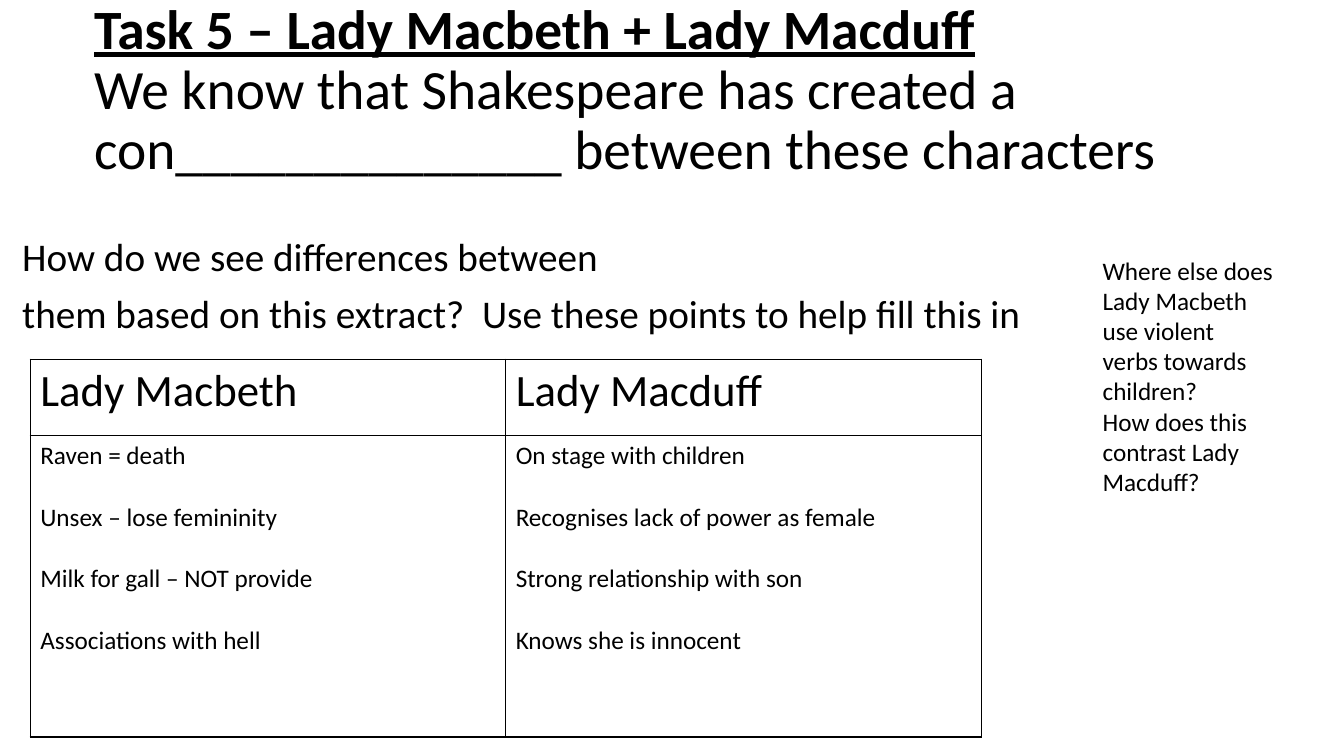
from dataclasses import dataclass
from lxml.etree import SubElement as Sub
from pptx import Presentation as Deck
from pptx.dml.color import RGBColor as Color
from pptx.enum.text import MSO_ANCHOR as Anchor, MSO_AUTO_SIZE as Fit, PP_ALIGN as Align
from pptx.oxml.ns import qn
from pptx.util import Inches, Pt

WIDE, HIGH = Inches(13.33), Inches(7.5)
BLACK = "000000"


@dataclass
class Box:
    left: float
    top: float
    width: float
    height: float

    def spans(self) -> tuple:
        return across(self.left), down(self.top), across(self.width), down(self.height)


@dataclass
class Column:
    head: str
    points: list


TITLE = Box(6.25, 2.4, 86.25, 19.33)
BODY = Box(0.9, 30.8, 91.6, 63.47)
TABLE = Box(2.25, 47.5, 70.75, 50)
NOTE = Box(81.3, 33.05, 14.25, 33.6)
ROWS = (10.13, 39.87)
COLUMNS = [
    Column("Lady Macbeth", [
        "Raven = death",
        "Unsex – lose femininity",
        "Milk for gall – NOT provide",
        "Associations with hell",
    ]),
    Column("Lady Macduff", [
        "On stage with children",
        "Recognises lack of power as female",
        "Strong relationship with son",
        "Knows she is innocent",
    ]),
]


def across(share: float) -> int:
    return round(WIDE * share / 100)


def down(share: float) -> int:
    return round(HIGH * share / 100)


def shade(code: str) -> Color:
    return Color.from_string(code)


def style(par, size: float) -> None:
    font = par.font
    font.name, font.size = "Calibri", Pt(size)
    font.color.rgb = shade(BLACK)
    par.alignment = Align.LEFT


def write(frame, lines: list, size: float, gap: float = 0) -> None:
    frame.text = "\n".join(lines)
    for place, par in enumerate(frame.paragraphs):
        style(par, size)
        par.space_before = Pt(gap if place else 0)


def move(shape, box: Box) -> None:
    shape.left, shape.top, shape.width, shape.height = box.spans()


def border(cell) -> None:
    props = cell._tc.get_or_add_tcPr()
    for place, side in enumerate(("lnL", "lnR", "lnT", "lnB")):
        line = Sub(props, qn("a:" + side), w=str(Pt(1)))
        fill = Sub(line, qn("a:solidFill"))
        Sub(fill, qn("a:srgbClr"), val=str(shade(BLACK)))
        props.insert(place, line)


def add_title(slide) -> None:
    title = slide.shapes.title
    move(title, TITLE)
    frame = title.text_frame
    frame.auto_size, frame.vertical_anchor = Fit.NONE, Anchor.MIDDLE
    par = frame.paragraphs[0]
    style(par, 39.6)
    par.line_spacing = 0.9
    head = par.add_run()
    head.text = "Task 5 – Lady Macbeth + Lady Macduff"
    head.font.bold = head.font.underline = True
    par.add_line_break()
    par.add_run().text = (
        "We know that Shakespeare has created a "
        "con______________ between these characters"
    )


def add_body(slide) -> None:
    body = slide.placeholders[1]
    move(body, BODY)
    frame = body.text_frame
    frame.auto_size = Fit.NONE
    write(frame, [
        "How do we see differences between",
        "them based on this extract?  Use these points to help fill this in",
    ], 28)
    for par in frame.paragraphs:
        par.line_spacing, par.space_before = 0.9, Pt(10)
        props = par._p.get_or_add_pPr()
        props.set("marL", "0")
        props.set("indent", "0")
        Sub(props, qn("a:buNone"))
        props.insert_element_before(props[-1], "a:tabLst", "a:defRPr", "a:extLst")


def add_table(slide) -> None:
    table = slide.shapes.add_table(len(ROWS), len(COLUMNS), *TABLE.spans()).table
    table.first_row = table.horz_banding = False
    for row, share in zip(table.rows, ROWS):
        row.height = down(share)
    for place, column in enumerate(COLUMNS):
        table.columns[place].width = across(TABLE.width / len(COLUMNS))
        head, points = table.cell(0, place), table.cell(1, place)
        write(head.text_frame, [column.head], 32)
        write(points.text_frame, column.points, 18, gap=22)
        for cell in (head, points):
            cell.fill.background()
            border(cell)


def add_note(slide) -> None:
    frame = slide.shapes.add_textbox(*NOTE.spans()).text_frame
    frame.word_wrap, frame.auto_size = True, Fit.SHAPE_TO_FIT_TEXT
    write(frame, [
        "Where else does Lady Macbeth use violent verbs towards children?",
        "How does this contrast Lady Macduff?",
    ], 18)


def main() -> None:
    deck = Deck()
    deck.slide_width, deck.slide_height = WIDE, HIGH
    slide = deck.slides.add_slide(deck.slide_layouts[1])
    for add in (add_title, add_body, add_table, add_note):
        add(slide)
    deck.save("out.pptx")


if __name__ == "__main__":
    main()
